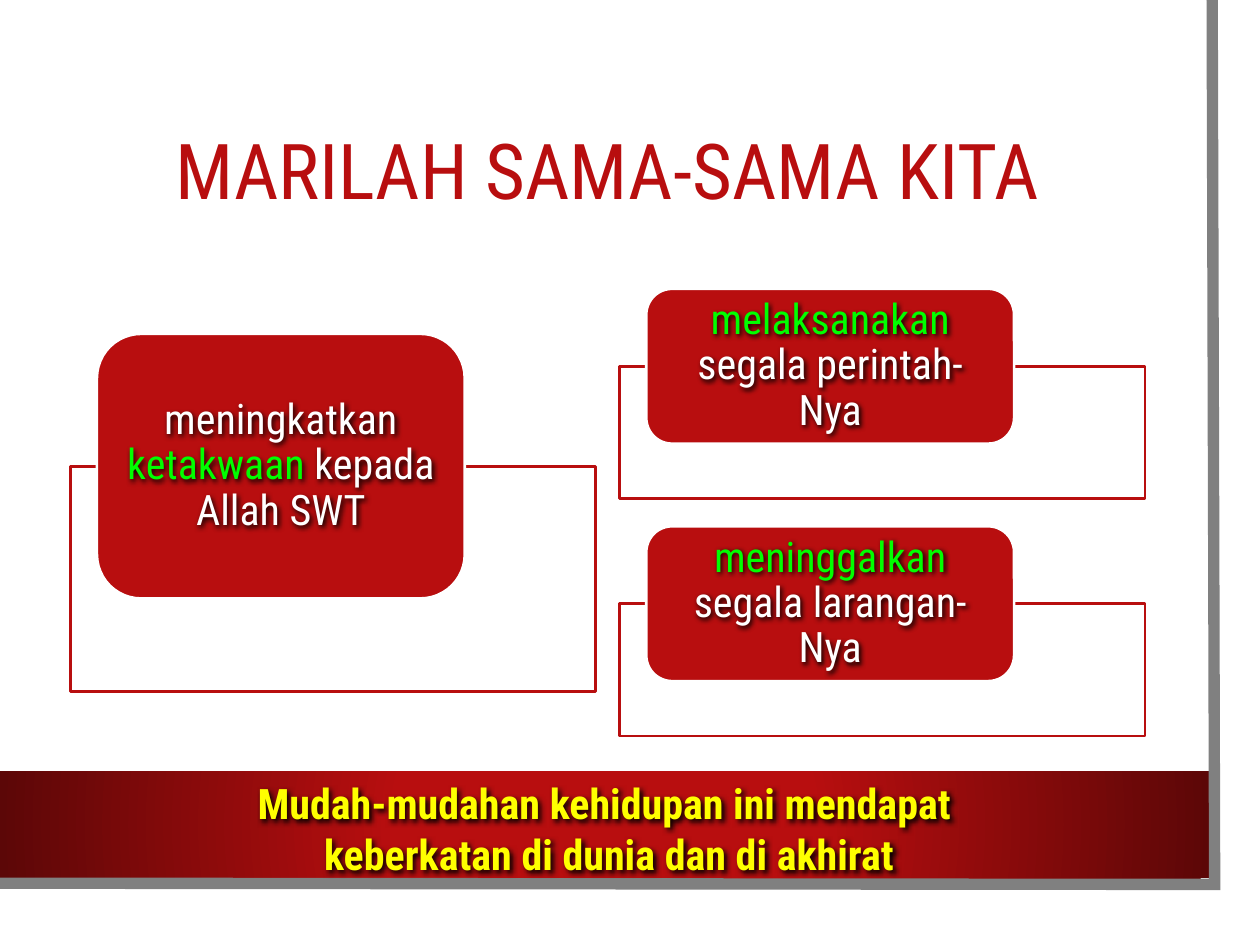
from lxml import etree
from pptx import Presentation
from pptx.dml.color import RGBColor
from pptx.enum.shapes import MSO_SHAPE
from pptx.enum.text import MSO_ANCHOR, PP_ALIGN
from pptx.oxml import parse_xml
from pptx.oxml.ns import nsdecls, qn
from pptx.util import Pt

FONT = "Roboto Condensed"
RED, DARK_RED, GREY = "B80E0F", "5C0707", "808080"
WHITE, GREEN, YELLOW = "FFFFFF", "00FF00", "FFFF00"
CARD_WIDTH, TAB_INDENT, TAB_WIDTH = 300.2, 15.1, 210.2


def color(value):
    return RGBColor.from_string(value)


def write_text(shape, paragraphs, size=24, bold=False, spacing=1.0, inset=(7.2, 3.6)):
    frame = shape.text_frame
    frame.word_wrap = True
    frame.vertical_anchor = MSO_ANCHOR.MIDDLE
    frame.margin_left = frame.margin_right = Pt(inset[0])
    frame.margin_top = frame.margin_bottom = Pt(inset[1])
    for index, parts in enumerate(paragraphs):
        paragraph = frame.add_paragraph() if index else frame.paragraphs[0]
        paragraph.alignment = PP_ALIGN.CENTER
        paragraph.line_spacing = spacing
        for text, text_color in parts:
            run = paragraph.add_run()
            run.text = text
            run.font.name = FONT
            run.font.size = Pt(size)
            run.font.bold = bold
            run.font.color.rgb = color(text_color)


def add_shadowed_text(slide, box, paragraphs, **text_format):
    shape = slide.shapes.add_textbox(*map(Pt, box))
    write_text(shape, paragraphs, **text_format)
    shape._element.spPr.append(parse_xml(
        f'<a:effectLst {nsdecls("a")}>'
        '<a:outerShdw blurRad="38100" dist="19050" dir="2700000" algn="tl">'
        '<a:srgbClr val="000000"/></a:outerShdw></a:effectLst>'))


def add_box(slide, kind, box, fill, line):
    shape = slide.shapes.add_shape(kind, *map(Pt, box))
    shape.shadow.inherit = False
    shape.fill.solid()
    shape.fill.fore_color.rgb = color(fill)
    if line:
        shape.line.color.rgb = color(line)
        shape.line.width = Pt(1.5)
    else:
        shape.line.fill.background()
    return shape


def add_banner(slide, box):
    banner = add_box(slide, MSO_SHAPE.RECTANGLE, box, RED, None)
    properties = banner._element.spPr
    gradient = parse_xml(
        f'<a:gradFill {nsdecls("a")} rotWithShape="1"><a:gsLst>'
        f'<a:gs pos="34000"><a:srgbClr val="{RED}"/></a:gs>'
        f'<a:gs pos="100000"><a:srgbClr val="{DARK_RED}"/></a:gs></a:gsLst>'
        '<a:path path="circle"><a:fillToRect l="50000" t="50000" r="50000" b="50000"/>'
        '</a:path></a:gradFill>')
    properties.replace(properties.find(qn("a:solidFill")), gradient)


def add_page_edge(slide, box):
    left, top, width, height = box
    right, bottom = left + width, top + height
    builder = slide.shapes.build_freeform(Pt(right - 1.4), Pt(top))
    builder.add_line_segments(
        [(Pt(right), Pt(bottom)), (Pt(left), Pt(bottom - 0.7))], close=False)
    edge = builder.convert_to_shape()
    edge.shadow.inherit = False
    edge.fill.background()
    edge.line.color.rgb = color(GREY)
    edge.line.width = Pt(6.5)
    etree.SubElement(edge.line._get_or_add_ln(), qn("a:miter"), lim="800000")


def add_title(slide, box, text):
    title = slide.shapes.title
    title.left, title.top, title.width, title.height = map(Pt, box)
    write_text(title, [[(text, RED)]], size=44, spacing=0.9)


def add_card(slide, box, tab_height, parts):
    left, top, width, height = box
    add_box(slide, MSO_SHAPE.RECTANGLE, box, WHITE, RED)
    tab_left, tab_top = left + TAB_INDENT, top - tab_height / 2
    add_box(slide, MSO_SHAPE.ROUNDED_RECTANGLE,
            (tab_left, tab_top, TAB_WIDTH, tab_height), RED, WHITE)
    corner = tab_height * 0.05
    text_box = (tab_left + corner, tab_top + corner,
                TAB_WIDTH - 2 * corner, tab_height - 2 * corner)
    add_shadowed_text(slide, text_box, [parts], spacing=0.9, inset=(7.9, 0))


def main():
    presentation = Presentation()
    presentation.slide_width, presentation.slide_height = Pt(720), Pt(540)
    slide = presentation.slides.add_slide(presentation.slide_layouts[5])

    add_banner(slide, (0, 440.6, 691.2, 61.2))
    add_page_edge(slide, (-1.4, 0, 695.5, 505.4))
    add_title(slide, (40.3, 54, 614.2, 91.4), "MARILAH SAMA-SAMA KITA")

    add_card(slide, (40.3, 266.4, CARD_WIDTH, 128.9), 151.2,
             [("meningkatkan ", WHITE), ("ketakwaan ", GREEN), ("kepada Allah SWT", WHITE)])
    duties = [("melaksanakan ", "segala perintah-Nya"),
              ("meninggalkan ", "segala larangan-Nya")]
    for index, (verb, rest) in enumerate(duties):
        add_card(slide, (354.2, 209.3 + index * 135.7, CARD_WIDTH, 75.6), 88.5,
                 [(verb, GREEN), (rest, WHITE)])

    add_shadowed_text(slide, (18, 440.6, 660.2, 65.5),
                      [[("Mudah-mudahan kehidupan ini mendapat ", YELLOW)],
                       [("keberkatan di dunia dan di akhirat", YELLOW)]], bold=True)
    presentation.save("out.pptx")


if __name__ == "__main__":
    main()
